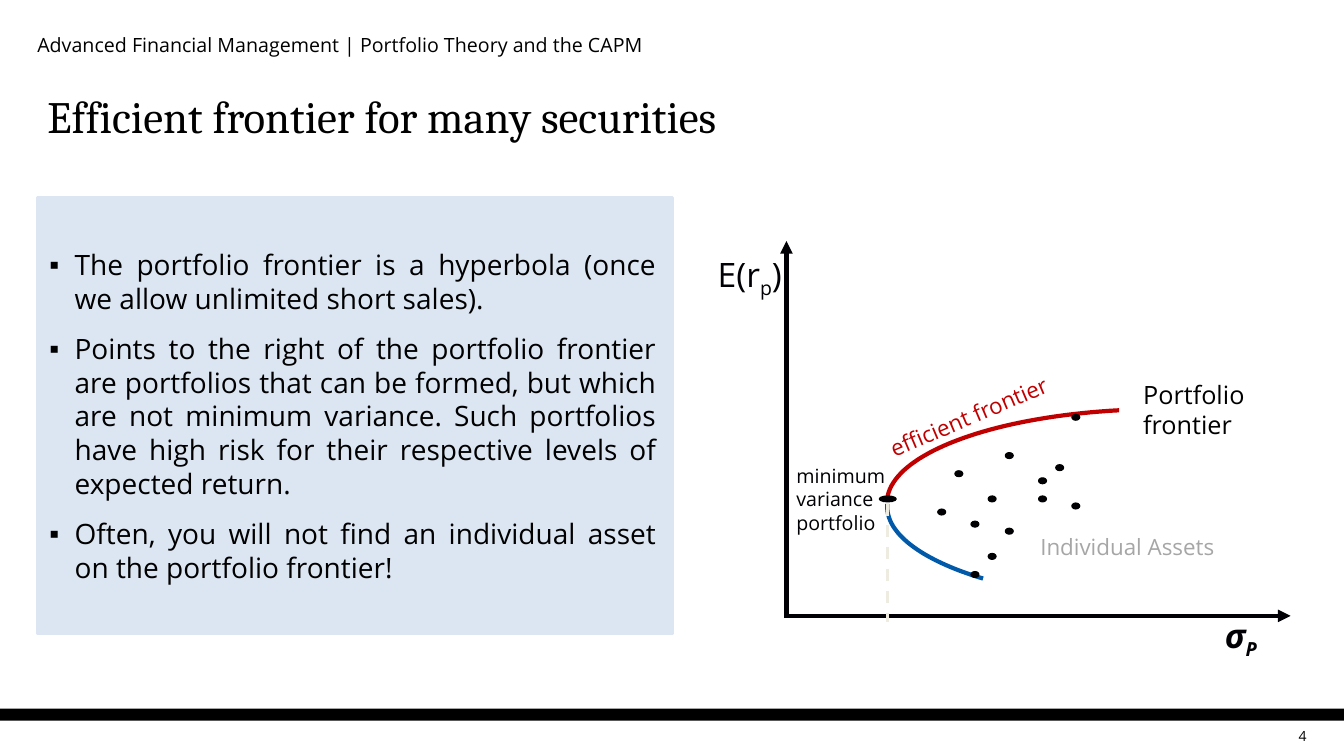
from dataclasses import dataclass
from typing import Any, NamedTuple

from lxml import etree
from pptx import Presentation
from pptx.dml.color import RGBColor
from pptx.enum.dml import MSO_LINE
from pptx.enum.shapes import MSO_CONNECTOR, MSO_SHAPE
from pptx.enum.text import MSO_ANCHOR, MSO_AUTO_SIZE, PP_ALIGN
from pptx.oxml.ns import qn
from pptx.util import Inches, Pt

LEFT, RIGHT, JUSTIFY = PP_ALIGN.LEFT, PP_ALIGN.RIGHT, PP_ALIGN.JUSTIFY
TOP, MIDDLE, BOTTOM = MSO_ANCHOR.TOP, MSO_ANCHOR.MIDDLE, MSO_ANCHOR.BOTTOM
NO_FIT = MSO_AUTO_SIZE.NONE
RECTANGLE, OVAL = MSO_SHAPE.RECTANGLE, MSO_SHAPE.OVAL
STRAIGHT, DASH = MSO_CONNECTOR.STRAIGHT, MSO_LINE.DASH


@dataclass(frozen=True)
class Theme:
    heading: str = "Cambria"
    text: str = "Open Sans"
    black: str = "000000"
    ink: str = "010004"
    efficient: str = "C00000"
    inefficient: str = "005AA9"
    muted: str = "A6A6A6"
    guide: str = "EEECE1"
    panel: str = "DCE6F2"
    title_size: int = 32
    axis_size: int = 24
    list_size: int = 20
    curve_size: int = 18
    label_size: int = 16
    small_size: int = 14
    number_size: int = 10


THEME = Theme()


class Box(NamedTuple):
    left: float
    top: float
    width: float
    height: float


class Point(NamedTuple):
    x: float
    y: float


class Span(NamedTuple):
    text: str
    baseline: int = 0


@dataclass(frozen=True)
class Label:
    box: Box
    spans: tuple[Span, ...]
    size: int
    color: str = THEME.ink
    align: Any = LEFT
    emphasis: bool = False
    rotation: float = 0
    inset: tuple[float, ...] = (0.1, 0.05, 0.1, 0.05)
    anchor: Any = TOP


@dataclass(frozen=True)
class Rule:
    start: Point
    end: Point
    color: str
    width: float
    arrow: bool = False
    dash: Any = None


@dataclass(frozen=True)
class Curve:
    start: Point
    bezier: tuple[Point, Point, Point, Point]
    color: str


HEADER = "Advanced Financial Management | Portfolio Theory and the CAPM"
TITLE = "Efficient frontier for many securities"
STATEMENTS = [
    "The portfolio frontier is a hyperbola (once we allow unlimited short sales).",
    "Points to the right of the portfolio frontier are portfolios that can be formed, "
    "but which are not minimum variance. Such portfolios have high risk for their "
    "respective levels of expected return.",
    "Often, you will not find an individual asset on the portfolio frontier!",
]
CURVES = [
    Curve(Point(11.1, 4.07), (Point(11.1, 4.07), Point(9.81, 4.14), Point(8.85, 4.51),
                              Point(8.8, 4.95)), THEME.efficient),
    Curve(Point(8.8, 5), (Point(8.8, 5.03), Point(8.8, 5.3), Point(9.15, 5.56),
                          Point(9.75, 5.74)), THEME.inefficient),
]
RULES = [
    Rule(Point(7.8, 6.11), Point(12.8, 6.11), THEME.ink, 3, arrow=True),
    Rule(Point(7.8, 6.13), Point(7.8, 2.39), THEME.ink, 3, arrow=True),
    Rule(Point(8.8, 4.99), Point(8.8, 6.17), THEME.guide, 2.25, dash=DASH),
]
ASSETS = [
    Point(9.63, 5.67), Point(10.63, 4.11), Point(9.8, 5.49), Point(9.97, 5.24),
    Point(9.63, 5.17), Point(9.8, 4.92), Point(9.3, 5.05), Point(9.47, 4.67),
    Point(9.97, 4.49), Point(10.47, 4.61), Point(10.3, 4.74), Point(10.3, 4.92),
    Point(10.63, 4.99),
]
MINIMUM_VARIANCE = Box(8.72, 4.92, 0.17, 0.06)
LABELS = [
    Label(Box(7.02, 2.47, 1.17, 0.5), (Span("E(r"), Span("p", -25000), Span(")")),
          THEME.axis_size),
    Label(Box(12.05, 6.05, 0.92, 0.5), (Span("σ"), Span("P", -25000)),
          THEME.axis_size, emphasis=True),
    Label(Box(7.8, 4.55, 1.17, 0.81), (Span("minimum variance portfolio"),),
          THEME.small_size),
    Label(Box(8.47, 3.99, 2.08, 0.37), (Span("efficient frontier"),),
          THEME.label_size, THEME.efficient, RIGHT, rotation=336.9),
    Label(Box(10.22, 5.24, 2, 0.37), (Span("Individual Assets"),),
          THEME.label_size, THEME.muted),
    Label(Box(11.24, 3.71, 1.38, 0.71), (Span("Portfolio frontier"),),
          THEME.curve_size, THEME.black),
    Label(Box(12.44, 7.18, 0.52, 0.24), (Span("4"),), THEME.number_size,
          THEME.black, RIGHT, inset=(0, 0, 0, 0), anchor=MIDDLE),
]


def apply(target: Any, values: dict[str, Any]) -> None:
    for name, value in values.items():
        setattr(target, name, value)


def place(shape: Any, box: Box) -> None:
    apply(shape, {name: Inches(value) for name, value in box._asdict().items()})


def format_frame(frame: Any, anchor: Any, inset: tuple[float, ...]) -> None:
    sides = ("margin_left", "margin_top", "margin_right", "margin_bottom")
    apply(frame, {"word_wrap": True, "auto_size": NO_FIT, "vertical_anchor": anchor,
                  **{side: Inches(value) for side, value in zip(sides, inset)}})


def write(paragraph: Any, span: Span, size: int, color: str, **extra: Any) -> None:
    run = paragraph.add_run()
    run.text = span.text
    apply(run.font, {"name": THEME.text, "size": Pt(size), **extra})
    run.font.color.rgb = RGBColor.from_string(color)
    if span.baseline:
        run._r.get_or_add_rPr().set("baseline", str(span.baseline))


def set_bullet(paragraph: Any, mark: str, indent: float) -> None:
    properties = paragraph._p.get_or_add_pPr()
    properties.set("marL", str(Inches(indent)))
    properties.set("indent", str(-Inches(indent)))
    if mark:
        etree.SubElement(properties, qn("a:buChar")).set("char", mark)
    else:
        etree.SubElement(properties, qn("a:buNone"))


def paint(shape: Any, fill: str, line: str, width: float) -> None:
    shape.fill.solid()
    shape.fill.fore_color.rgb = RGBColor.from_string(fill)
    shape.line.color.rgb = RGBColor.from_string(line)
    shape.line.width = Pt(width)


def draw_shape(slide: Any, kind: Any, box: Box, fill: str, width: float) -> None:
    shape = slide.shapes.add_shape(kind, *map(Inches, box))
    shape.shadow.inherit = False
    paint(shape, fill, THEME.black, width)
    if not width:
        shape.line.fill.background()


def draw_curve(slide: Any, curve: Curve, steps: int = 40) -> None:
    points = []
    for step in range(steps + 1):
        t = step / steps
        weights = ((1 - t) ** 3, 3 * t * (1 - t) ** 2, 3 * t * t * (1 - t), t ** 3)
        points.append(tuple(Inches(sum(w * c for w, c in zip(weights, axis)))
                            for axis in zip(*curve.bezier)))
    builder = slide.shapes.build_freeform(*map(Inches, curve.start))
    builder.add_line_segments(points, close=False)
    shape = builder.convert_to_shape()
    shape.shadow.inherit = False
    shape.fill.background()
    shape.line.color.rgb = RGBColor.from_string(curve.color)
    shape.line.width = Pt(3)


def draw_rule(slide: Any, rule: Rule) -> None:
    connector = slide.shapes.add_connector(STRAIGHT, *map(Inches, rule.start + rule.end))
    connector.line.color.rgb = RGBColor.from_string(rule.color)
    apply(connector.line, {"width": Pt(rule.width), "dash_style": rule.dash})
    if rule.arrow:
        etree.SubElement(connector.line._get_or_add_ln(), qn("a:tailEnd")).set("type", "triangle")
    etree.SubElement(connector._element.spPr, qn("a:effectLst"))


def draw_label(slide: Any, label: Label) -> None:
    box = slide.shapes.add_textbox(*map(Inches, label.box))
    box.rotation = label.rotation
    format_frame(box.text_frame, label.anchor, label.inset)
    paragraph = box.text_frame.paragraphs[0]
    paragraph.alignment = label.align
    for span in label.spans:
        write(paragraph, span, label.size, label.color,
              bold=label.emphasis, italic=label.emphasis)


def fill_texts(slide: Any) -> None:
    title, header, statements = slide.placeholders
    place(title, Box(0.37, 0.7, 12.6, 0.76))
    format_frame(title.text_frame, BOTTOM, (0.1, 0.05, 0.1, 0.05))
    heading = title.text_frame.paragraphs[0]
    heading.alignment = JUSTIFY
    write(heading, Span(TITLE), THEME.title_size, THEME.black, name=THEME.heading)

    place(header, Box(0.37, 0.27, 12.6, 0.35))
    format_frame(header.text_frame, MIDDLE, (0, 0, 0, 0))
    course = header.text_frame.paragraphs[0]
    set_bullet(course, "", 0)
    apply(course, {"alignment": JUSTIFY, "space_before": Pt(0)})
    write(course, Span(HEADER), THEME.small_size, THEME.black)

    place(statements, Box(0.37, 1.96, 6.3, 4.33))
    paint(statements, THEME.panel, THEME.panel, 2)
    frame = statements.text_frame
    format_frame(frame, MIDDLE, (0.12, 0.05, 0.16, 0.05))
    for index, statement in enumerate(STATEMENTS):
        paragraph = frame.add_paragraph() if index else frame.paragraphs[0]
        set_bullet(paragraph, "▪", 0.25)
        apply(paragraph, {"alignment": JUSTIFY, "space_before": Pt(12 if index else 0)})
        write(paragraph, Span(statement), THEME.list_size, THEME.black)


def main() -> None:
    deck = Presentation()
    apply(deck, {"slide_width": Inches(13.33), "slide_height": Inches(7.5)})
    slide = deck.slides.add_slide(deck.slide_layouts[3])
    fill_texts(slide)
    draw_shape(slide, RECTANGLE, Box(0, 7.03, 13.33, 0.12), THEME.black, 0)
    for curve in CURVES:
        draw_curve(slide, curve)
    for rule in RULES:
        draw_rule(slide, rule)
    for asset in ASSETS:
        draw_shape(slide, OVAL, Box(*asset, 0.08, 0.06), THEME.ink, 0.75)
    draw_shape(slide, OVAL, MINIMUM_VARIANCE, THEME.ink, 0.75)
    for label in LABELS:
        draw_label(slide, label)
    deck.save("out.pptx")


if __name__ == "__main__":
    main()
